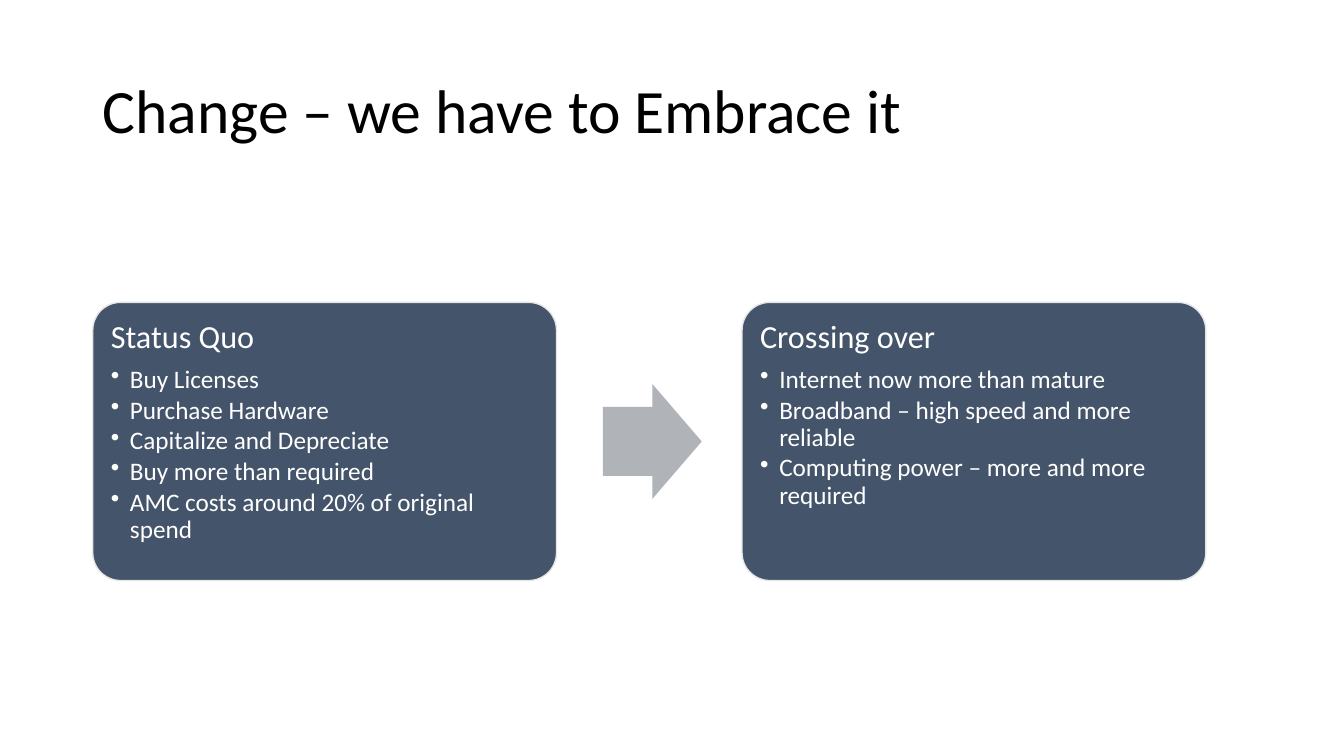
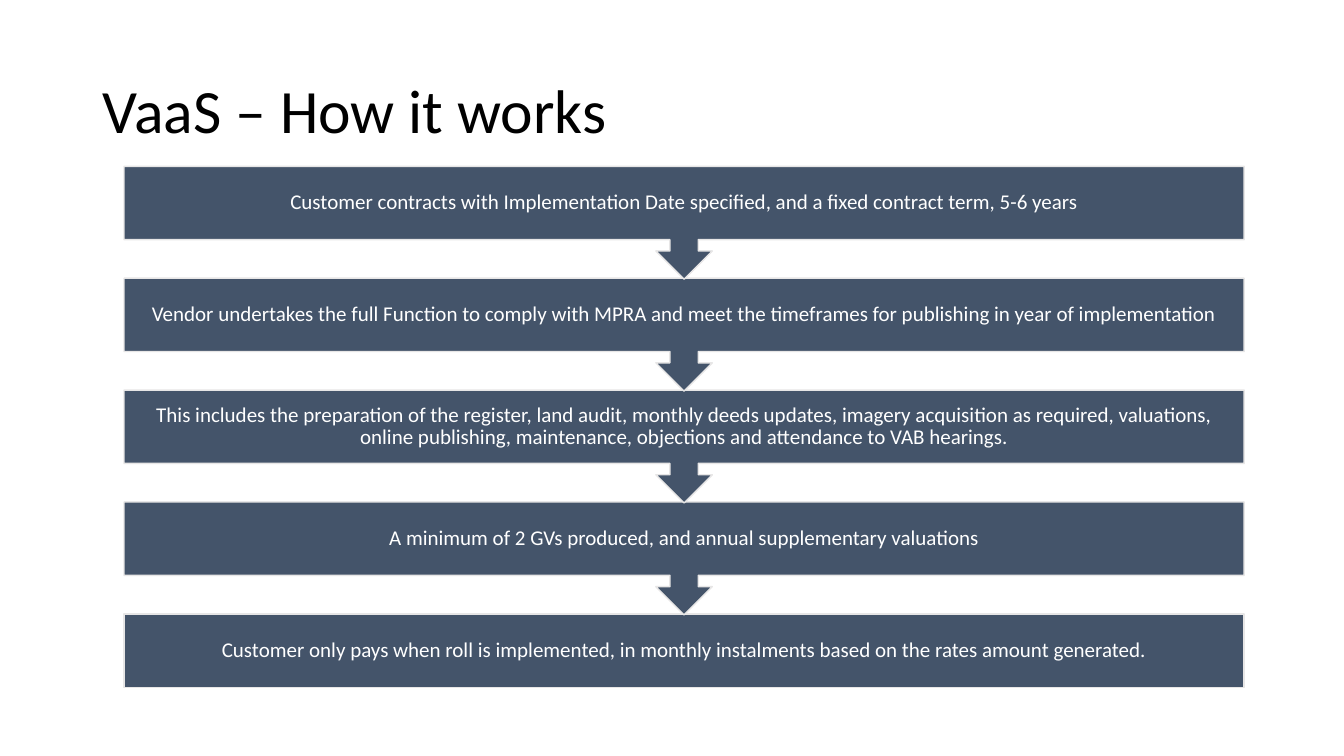
from pptx import Presentation, util as u
from pptx.dml.color import RGBColor
from pptx.enum import shapes, text
from pptx.oxml.ns import qn
from lxml import etree

# Content
CHANGE_TITLE = "Change – we have to Embrace it"
CHANGE_CARDS = [
    ("Status Quo", [
        "Buy Licenses",
        "Purchase Hardware",
        "Capitalize and Depreciate",
        "Buy more than required",
        "AMC costs around 20% of original spend",
    ]),
    ("Crossing over", [
        "Internet now more than mature",
        "Broadband – high speed and more reliable",
        "Computing power – more and more required",
    ]),
]
PROCESS_TITLE = "VaaS – How it works"
PROCESS_STEPS = [
    "Customer contracts with Implementation Date specified, and a fixed contract term, 5-6 years",
    "Vendor undertakes the full Function to comply with MPRA and meet the timeframes for "
    "publishing in year of implementation",
    "This includes the preparation of the register, land audit, monthly deeds updates, imagery "
    "acquisition as required, valuations, online publishing, maintenance, objections and "
    "attendance to VAB hearings.",
    "A minimum of 2 GVs produced, and annual supplementary valuations",
    "Customer only pays when roll is implemented, in monthly instalments based on the rates "
    "amount generated.",
]

# Shared style
FONT = "Calibri"
BLACK, WHITE, SLATE, GREY, EDGE = "000000", "FFFFFF", "44546A", "B0B4B9", "E7E6E6"
SHAPE = shapes.MSO_SHAPE
ANCHOR = text.MSO_ANCHOR
ALIGN = text.PP_ALIGN


def px(length):
    """100 px make one inch."""
    return u.Emu(length * 9144)


def colour(value):
    return RGBColor.from_string(value)


def write(para, words, size, ink=WHITE, align=ALIGN.LEFT, after=0, bullet_indent=0):
    if bullet_indent:
        props = para._p.get_or_add_pPr()
        props.set("marL", str(px(bullet_indent)))
        props.set("indent", str(-px(bullet_indent)))
        etree.SubElement(props, qn("a:buChar")).set("char", "•")
    para.alignment = align
    para.line_spacing = 0.9
    para.space_after = u.Pt(after)
    span = para.add_run()
    span.text = words
    span.font.name = FONT
    span.font.size = u.Pt(size)
    span.font.color.rgb = colour(ink)


def set_frame(shape, anchor, across, down):
    frame = shape.text_frame
    frame.word_wrap = True
    frame.vertical_anchor = anchor
    frame.margin_left = frame.margin_right = px(across)
    frame.margin_top = frame.margin_bottom = px(down)
    return frame


def add_shape(page, kind, left, top, width, height, fill=SLATE, line=EDGE, adjust=()):
    shape = page.shapes.add_shape(kind, px(left), px(top), px(width), px(height))
    shape.shadow.inherit = False
    shape.fill.solid()
    shape.fill.fore_color.rgb = colour(fill)
    if line:
        shape.line.color.rgb = colour(line)
        shape.line.width = u.Pt(1)
    else:
        shape.line.fill.background()
    for index, value in enumerate(adjust):
        shape.adjustments[index] = value
    return shape


def add_page(deck, title):
    page = deck.slides.add_slide(deck.slide_layouts[6])
    box = page.shapes.add_textbox(px(92), px(40), px(1150), px(145))
    frame = set_frame(box, ANCHOR.MIDDLE, 10, 5)
    write(frame.paragraphs[0], title, 44, BLACK)
    return page


def build_change(deck):
    page = add_page(deck, CHANGE_TITLE)
    left, top, width, height, step = 92, 300, 460, 276, 644

    # Cards
    for index, (heading, points) in enumerate(CHANGE_CARDS):
        card = add_shape(page, SHAPE.ROUNDED_RECTANGLE, left + index * step, top,
                         width, height, adjust=[0.1])
        frame = set_frame(card, ANCHOR.TOP, 10, 10)
        write(frame.paragraphs[0], heading, 23, after=8)
        for point in points:
            write(frame.add_paragraph(), point, 18, after=2.5, bullet_indent=19)

    # Arrow between the cards
    arrow_height = 114
    add_shape(page, SHAPE.RIGHT_ARROW, left + width + 46, top + (height - arrow_height) // 2,
              98, arrow_height, GREY, None, [0.6, 0.5])


def build_process(deck):
    page = add_page(deck, PROCESS_TITLE)
    left, top, width, pitch = 123, 165, 1111, 111
    last = len(PROCESS_STEPS) - 1

    # Bottom step first, so each arrow tip lies over the step below
    for index in range(last, -1, -1):
        kind, height = (SHAPE.RECTANGLE, 73) if index == last else (SHAPE.DOWN_ARROW_CALLOUT, 112)
        step = add_shape(page, kind, left, top + index * pitch, width, height)
        frame = set_frame(step, ANCHOR.MIDDLE, 12, 12)
        write(frame.paragraphs[0], PROCESS_STEPS[index], 15, align=ALIGN.CENTER)


def main():
    deck = Presentation()
    deck.slide_width, deck.slide_height = px(1333), px(750)
    build_change(deck)
    build_process(deck)
    deck.save("out.pptx")


if __name__ == "__main__":
    main()
